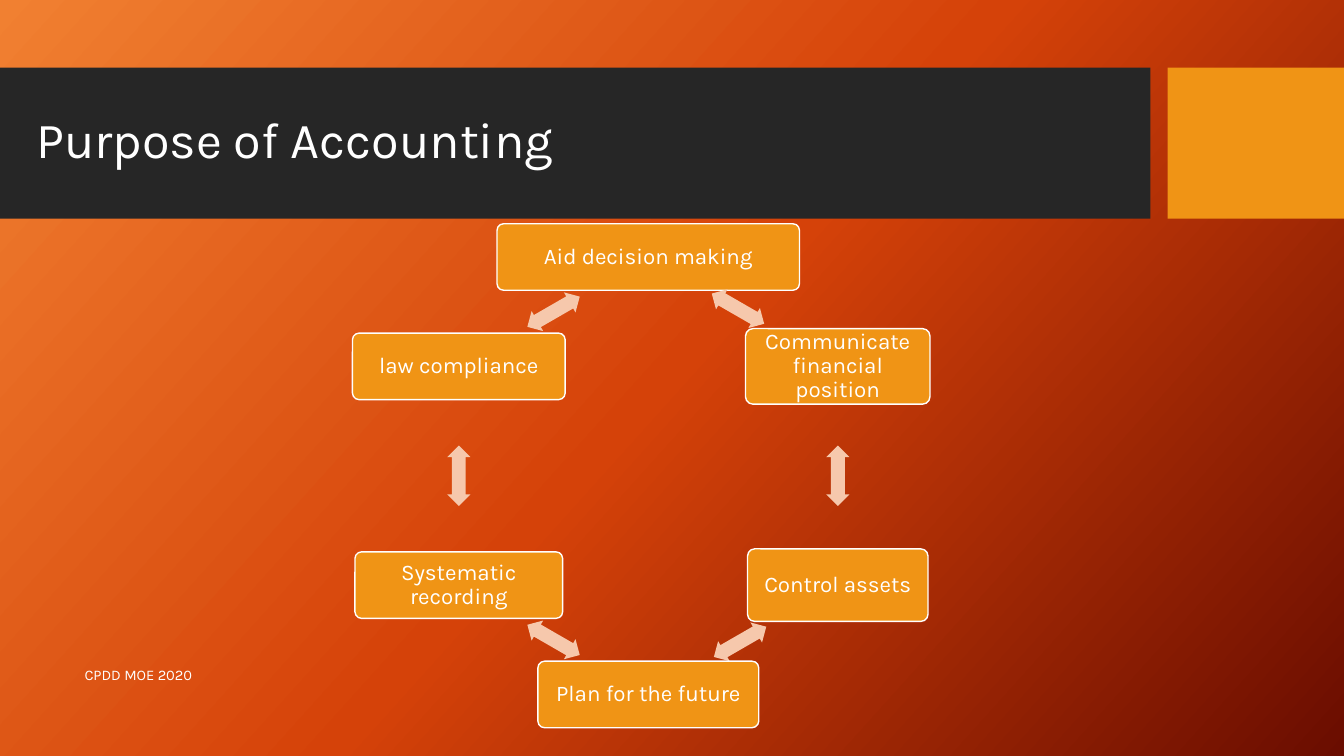
import copy
import math

import pptx
import pptx.dml.color
import pptx.enum.shapes
import pptx.enum.text
import pptx.oxml.ns
import pptx.util

Inches = pptx.util.Inches
SHAPE = pptx.enum.shapes.MSO_SHAPE
ALIGN = pptx.enum.text.PP_ALIGN

TITLE = ("Purpose of Accounting", (0.26, 0.82, 5.35, 1.18))
FOOTER = ("CPDD MOE 2020", (0.74, 6.49, 7.51, 0.4))
BANDS = [((0, 0.67, 11.41, 1.5), "dark"), ((11.58, 0.67, 1.75, 1.5), "accent")]
PURPOSES = [
    ("Aid decision making", 3.0, 0.66),
    ("Communicate financial position", 1.83, 0.75),
    ("Control assets", 1.79, 0.72),
    ("Plan for the future", 2.19, 0.66),
    ("Systematic recording", 2.06, 0.66),
    ("law compliance", 2.11, 0.66),
]
ARROW_SHIFTS = [(-0.05, -0.03), (0, 0), (-0.03, 0.02), (0, 0), (0, 0), (0, 0)]

RING_CENTER = (6.43, 4.72)
RING_RADIUS = 2.17
ARROW_SIZE = (0.6, 0.23)

THEME = {
    "font": "Karla",
    "title": 36,
    "label": 16,
    "footer": 10.5,
    "white": "FFFFFF",
    "dark": "262626",
    "accent": "F09415",
    "arrow": "F6C8AC",
    "gradient": [(0, "F18031"), (0.5, "D54209"), (1, "6A0D00")],
    "gradient_angle": 42,
}


def color(name):
    return pptx.dml.color.RGBColor.from_string(THEME.get(name, name))


def paint_background(page):
    fill = page.background.fill
    fill.gradient()
    fill.gradient_angle = 360 - THEME["gradient_angle"]
    stop_list = page.element.find(".//" + pptx.oxml.ns.qn("a:gsLst"))
    stop_list.append(copy.deepcopy(stop_list[-1]))
    for stop, (position, shade) in zip(fill.gradient_stops, THEME["gradient"]):
        stop.position = position
        stop.color.rgb = color(shade)


def add_block(page, kind, place, fill, outlined=False):
    block = page.shapes.add_shape(kind, *map(Inches, place))
    block.shadow.inherit = False
    block.fill.solid()
    block.fill.fore_color.rgb = color(fill)
    if outlined:
        block.line.color.rgb = color("white")
        block.line.width = pptx.util.Pt(1)
    else:
        block.line.fill.background()
    return block


def write(box, text, size, align=ALIGN.LEFT, spacing=1.0):
    frame = box.text_frame
    frame.word_wrap = True
    frame.vertical_anchor = pptx.enum.text.MSO_ANCHOR.MIDDLE
    para = frame.paragraphs[0]
    para.alignment = align
    para.line_spacing = spacing
    span = para.add_run()
    span.text = text
    span.font.name = THEME["font"]
    span.font.size = pptx.util.Pt(THEME[size])
    span.font.color.rgb = color("white")


def centered(center, width, height):
    return center[0] - width / 2, center[1] - height / 2, width, height


def ring_point(degrees, radius):
    angle = math.radians(degrees)
    return (RING_CENTER[0] + radius * math.sin(angle),
            RING_CENTER[1] - radius * math.cos(angle))


def add_purpose(page, text, center, width, height):
    box = add_block(page, SHAPE.ROUNDED_RECTANGLE,
                    centered(center, width, height), "accent", outlined=True)
    box.adjustments[0] = 0.1
    frame = box.text_frame
    frame.margin_left = frame.margin_right = Inches(0.07)
    frame.margin_top = frame.margin_bottom = Inches(0.07)
    write(box, text, "label", ALIGN.CENTER, 0.9)


def add_cycle(page):
    step = 360 / len(PURPOSES)
    arrow_radius = RING_RADIUS * math.cos(math.radians(step / 2))
    for index, (text, width, height) in enumerate(PURPOSES):
        add_purpose(page, text, ring_point(index * step, RING_RADIUS), width, height)
        turn = (index + 0.5) * step
        x, y = ring_point(turn, arrow_radius)
        shift_x, shift_y = ARROW_SHIFTS[index]
        arrow = add_block(page, SHAPE.LEFT_RIGHT_ARROW,
                          centered((x + shift_x, y + shift_y), *ARROW_SIZE), "arrow")
        arrow.adjustments[0] = 0.6
        arrow.adjustments[1] = 0.5
        arrow.rotation = turn


def main():
    deck = pptx.Presentation()
    deck.slide_width = Inches(13.33)
    deck.slide_height = Inches(7.5)
    page = deck.slides.add_slide(deck.slide_layouts[6])
    paint_background(page)
    for place, fill in BANDS:
        add_block(page, SHAPE.RECTANGLE, place, fill)
    for (text, place), size, spacing in [(TITLE, "title", 0.9), (FOOTER, "footer", 1.0)]:
        box = page.shapes.add_textbox(*map(Inches, place))
        write(box, text, size, spacing=spacing)
    add_cycle(page)
    deck.save("out.pptx")


if __name__ == "__main__":
    main()
